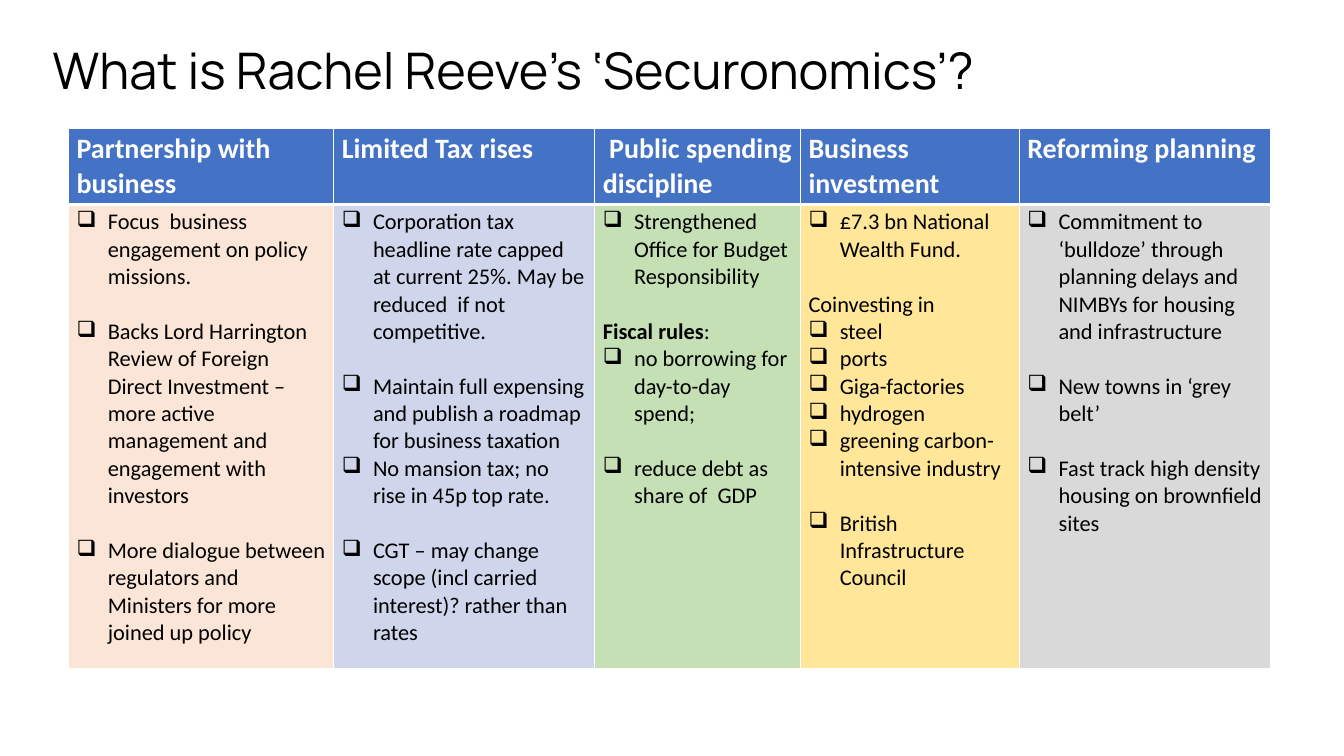
from lxml.etree import SubElement
from pptx import Presentation
from pptx.dml.color import RGBColor
from pptx.enum.text import MSO_ANCHOR
from pptx.oxml import parse_xml
from pptx.oxml.ns import nsdecls, qn
from pptx.util import Inches, Pt

BLANK_LAYOUT = 6
LINE_GAP = 19.5  # points, one line of body text
HEADER_FILL = "4472C4"
# Paragraph kinds: bullet, bullet after a gap, plain text after a gap
BULLET, GAP_BULLET, GAP_PLAIN = (True, 0), (True, LINE_GAP), (False, LINE_GAP)

# Each column: width, heading, body fill, paragraphs of (kind, runs of (text, bold))
COLUMNS = [
    (2.63, "Partnership with business", "FBE5D6", [
        (BULLET, [("Focus  business engagement on policy missions.", False)]),
        (GAP_BULLET, [("Backs Lord Harrington Review of Foreign Direct Investment – "
                       "more active management and engagement with investors", False)]),
        (GAP_BULLET, [("More dialogue between regulators and Ministers for more "
                       "joined up policy", False)]),
    ]),
    (2.59, "Limited Tax rises", "CFD5EA", [
        (BULLET, [("Corporation tax headline rate capped at current 25%. "
                   "May be reduced  if not competitive.", False)]),
        (GAP_BULLET, [("Maintain full expensing and publish a roadmap for "
                       "business taxation", False)]),
        (BULLET, [("No mansion tax; no rise in 45p top rate.", False)]),
        (GAP_BULLET, [("CGT – may change scope (incl carried interest)? "
                       "rather than rates", False)]),
    ]),
    (2.04, " Public spending discipline", "C5E0B4", [
        (BULLET, [("Strengthened Office for Budget Responsibility", False)]),
        (GAP_PLAIN, [("Fiscal rules", True), (":", False)]),
        (BULLET, [("no borrowing for day-to-day spend;", False)]),
        (GAP_BULLET, [("reduce debt as share of  GDP", False)]),
    ]),
    (2.17, "Business investment", "FFE699", [
        (BULLET, [("£7.3 bn National Wealth Fund.", False)]),
        (GAP_PLAIN, [("Coinvesting in", False)]),
        *[(BULLET, [(industry, False)]) for industry in (
            "steel", "ports", "Giga-factories", "hydrogen",
            "greening carbon- intensive industry")],
        (GAP_BULLET, [("British Infrastructure Council", False)]),
    ]),
    (2.49, "Reforming planning", "D9D9D9", [
        (BULLET, [("Commitment to ‘bulldoze’ through planning delays and NIMBYs "
                   "for housing and infrastructure", False)]),
        (GAP_BULLET, [("New towns in ‘grey belt’", False)]),
        (GAP_BULLET, [("Fast track high density housing on brownfield sites", False)]),
    ]),
]


def color(hex_string):
    return RGBColor.from_string(hex_string)


def add_text(paragraph, text, font="Calibri", size=16, fill="000000", bold=False):
    run = paragraph.add_run()
    run.text = text
    run.font.name = font
    run.font.size = Pt(size)
    run.font.bold = bold
    run.font.color.rgb = color(fill)


def add_bullet(paragraph, character="❑", indent=0.31):
    properties = paragraph._p.get_or_add_pPr()
    properties.set("marL", str(Inches(indent)))
    properties.set("indent", str(-Inches(indent)))
    SubElement(properties, qn("a:buChar")).set("char", character)


def set_borders(cell, hex_string="FFFFFF", **widths):
    properties = cell._tc.get_or_add_tcPr()
    for position, side in enumerate(("L", "R", "T", "B")):
        line = parse_xml(
            f'<a:ln{side} {nsdecls("a")} w="{Pt(widths.get(side, 1))}">'
            f'<a:solidFill><a:srgbClr val="{hex_string}"/></a:solidFill></a:ln{side}>')
        properties.insert(position, line)


class SlideBuilder:
    def __init__(self, presentation):
        self.slide = presentation.slides.add_slide(presentation.slide_layouts[BLANK_LAYOUT])

    def title(self, text, left, top, width, height):
        shape = self.slide.shapes.add_textbox(
            Inches(left), Inches(top), Inches(width), Inches(height))
        frame = shape.text_frame
        frame.word_wrap = True
        frame.vertical_anchor = MSO_ANCHOR.MIDDLE
        paragraph = frame.paragraphs[0]
        paragraph.line_spacing = 0.9
        add_text(paragraph, text, font="Manrope", size=36)

    def cell(self, cell, fill, **border_widths):
        cell.margin_left = cell.margin_right = Inches(0.08)
        cell.margin_top = cell.margin_bottom = Inches(0.04)
        cell.fill.solid()
        cell.fill.fore_color.rgb = color(fill)
        set_borders(cell, **border_widths)
        return cell.text_frame

    def table(self, columns, left, top, row_heights):
        total_width = sum(column[0] for column in columns)
        table = self.slide.shapes.add_table(
            len(row_heights), len(columns), Inches(left), Inches(top),
            Inches(total_width), Inches(sum(row_heights))).table
        table.horz_banding = False
        for row, height in zip(table.rows, row_heights):
            row.height = Inches(height)

        for index, (width, heading, body_fill, paragraphs) in enumerate(columns):
            table.columns[index].width = Inches(width)
            header = self.cell(table.cell(0, index), HEADER_FILL, B=3)
            add_text(header.paragraphs[0], heading, size=20, fill="FFFFFF", bold=True)

            body = self.cell(table.cell(1, index), body_fill, T=3)
            for number, ((bulleted, gap), runs) in enumerate(paragraphs):
                paragraph = body.add_paragraph() if number else body.paragraphs[0]
                paragraph.space_before = Pt(gap)
                if bulleted:
                    add_bullet(paragraph)
                for text, bold in runs:
                    add_text(paragraph, text, bold=bold)


def main():
    presentation = Presentation()
    presentation.slide_width = Inches(13.33)
    presentation.slide_height = Inches(7.5)
    builder = SlideBuilder(presentation)

    # Title
    builder.title("What is Rachel Reeve’s ‘Securonomics’?", 0.42, 0.19, 10.99, 1.08)
    # Five policy columns
    builder.table(COLUMNS, 0.68, 1.27, row_heights=(0.76, 4.6))

    presentation.save("out.pptx")


if __name__ == "__main__":
    main()
